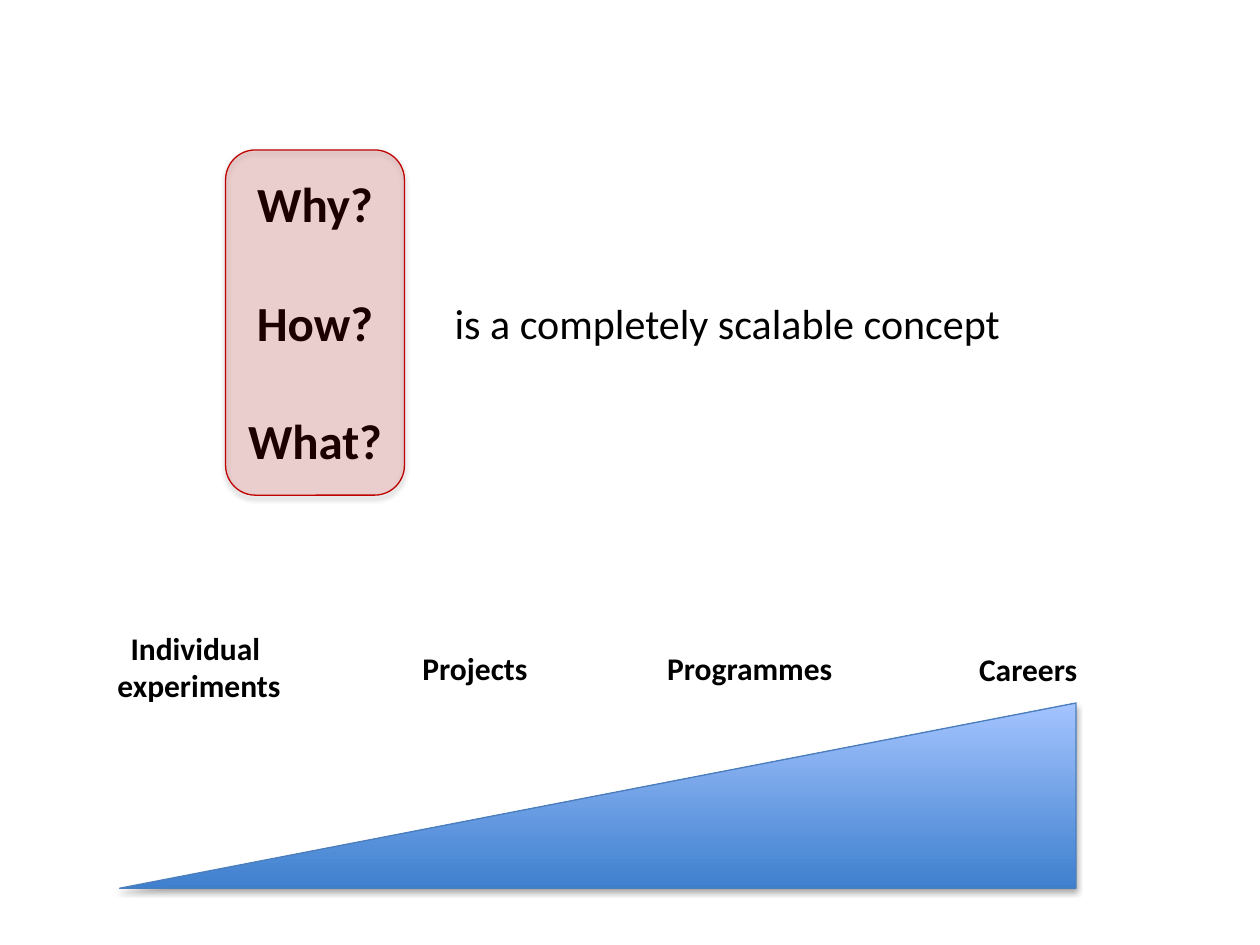
"""Build a slide on why, how and what as a scalable concept."""
from lxml.etree import SubElement
from pptx import Presentation
from pptx.dml.color import RGBColor
from pptx.enum.shapes import MSO_SHAPE
from pptx.enum.text import MSO_AUTO_SIZE, PP_ALIGN
from pptx.oxml.ns import qn
from pptx.util import Inches, Pt

BLACK = RGBColor(0x00, 0x00, 0x00)
RED = RGBColor(0xC0, 0x00, 0x00)
OUTLINE_BLUE = RGBColor(0x4B, 0x7E, 0xBC)
DEEP_BLUE = RGBColor(0x3F, 0x80, 0xCE)
PALE_BLUE = RGBColor(0xA4, 0xC4, 0xFF)

STAGES = [
    (["Individual ", "experiments"], (0.83, 4.94, 1.5, 0.71)),
    (["Projects"], (3.25, 5.1, 1.04, 0.4)),
    (["Programmes"], (5.19, 5.1, 1.52, 0.4)),
    (["Careers"], (7.67, 5.11, 0.98, 0.4)),
]


class SlideWriter:
    """Holds the text style and the current page."""

    def __init__(self, deck):
        self.style = {"name": "Calibri", "bold": True}
        self.page = deck.slides.add_slide(deck.slide_layouts[6])

    def text(self, lines, bounds, size, shapes=None, align=PP_ALIGN.CENTER, gap=0, **changes):
        """Add a text box with one paragraph per line."""
        box = (shapes or self.page.shapes).add_textbox(*map(Inches, bounds))
        frame = box.text_frame
        frame.word_wrap = False
        frame.auto_size = MSO_AUTO_SIZE.SHAPE_TO_FIT_TEXT
        for index, line in enumerate(lines):
            para = frame.paragraphs[0] if index == 0 else frame.add_paragraph()
            para.alignment = align
            para.space_before = Pt(gap if index else 0)
            span = para.add_run()
            span.text = line
            for name, value in {**self.style, "size": Pt(size), **changes}.items():
                setattr(span.font, name, value)
            span.font.color.rgb = BLACK

    def shape(self, kind, bounds, line_color, shapes=None):
        """Add an outlined shape with a soft shadow below it."""
        shape = (shapes or self.page.shapes).add_shape(kind, *map(Inches, bounds))
        shape.line.color.rgb = line_color
        shape.line.width = Pt(0.75)
        shape.shadow.inherit = False
        effects = shape._element.spPr.find(qn("a:effectLst"))
        shadow = SubElement(effects, qn("a:outerShdw"), blurRad=str(Pt(3.1)),
                            dist=str(Pt(1.8)), dir="5400000", rotWithShape="0")
        color = SubElement(shadow, qn("a:srgbClr"), val=str(BLACK))
        SubElement(color, qn("a:alpha"), val="35000")
        return shape

    def tinted_panel(self, bounds, color, opacity, shapes):
        """Add a rounded panel with a see-through fill."""
        panel = self.shape(MSO_SHAPE.ROUNDED_RECTANGLE, bounds, color, shapes)
        panel.fill.solid()
        panel.fill.fore_color.rgb = color
        tint = panel._element.spPr.find(qn("a:solidFill")).find(qn("a:srgbClr"))
        SubElement(tint, qn("a:alpha"), val=str(opacity * 1000))

    def wedge(self, bounds):
        """Add a wedge that rises to the right."""
        wedge = self.shape(MSO_SHAPE.RIGHT_TRIANGLE, bounds, OUTLINE_BLUE)
        wedge._element.spPr.xfrm.set("flipH", "1")
        wedge.fill.gradient()
        wedge.fill.gradient_angle = 90
        for stop, position, color in zip(wedge.fill.gradient_stops, (0, 1), (DEEP_BLUE, PALE_BLUE)):
            stop.position = position
            stop.color.rgb = color


def main():
    deck = Presentation()
    deck.slide_width, deck.slide_height = Inches(10), Inches(7.5)
    writer = SlideWriter(deck)
    writer.text(["is a completely scalable concept"], (3.51, 2.31, 4.64, 0.5), 24,
                align=PP_ALIGN.LEFT, bold=False)
    questions = writer.page.shapes.add_group_shape().shapes
    writer.text(["Why?", "How?", "What?"], (1.86, 1.33, 1.28, 2.46), 28, questions, gap=34)
    writer.tinted_panel((1.79, 1.19, 1.42, 2.74), RED, 15, questions)
    writer.wedge((0.95, 5.58, 7.59, 1.47))
    for lines, bounds in STAGES:
        writer.text(lines, bounds, 18)
    deck.save("out.pptx")


if __name__ == "__main__":
    main()
